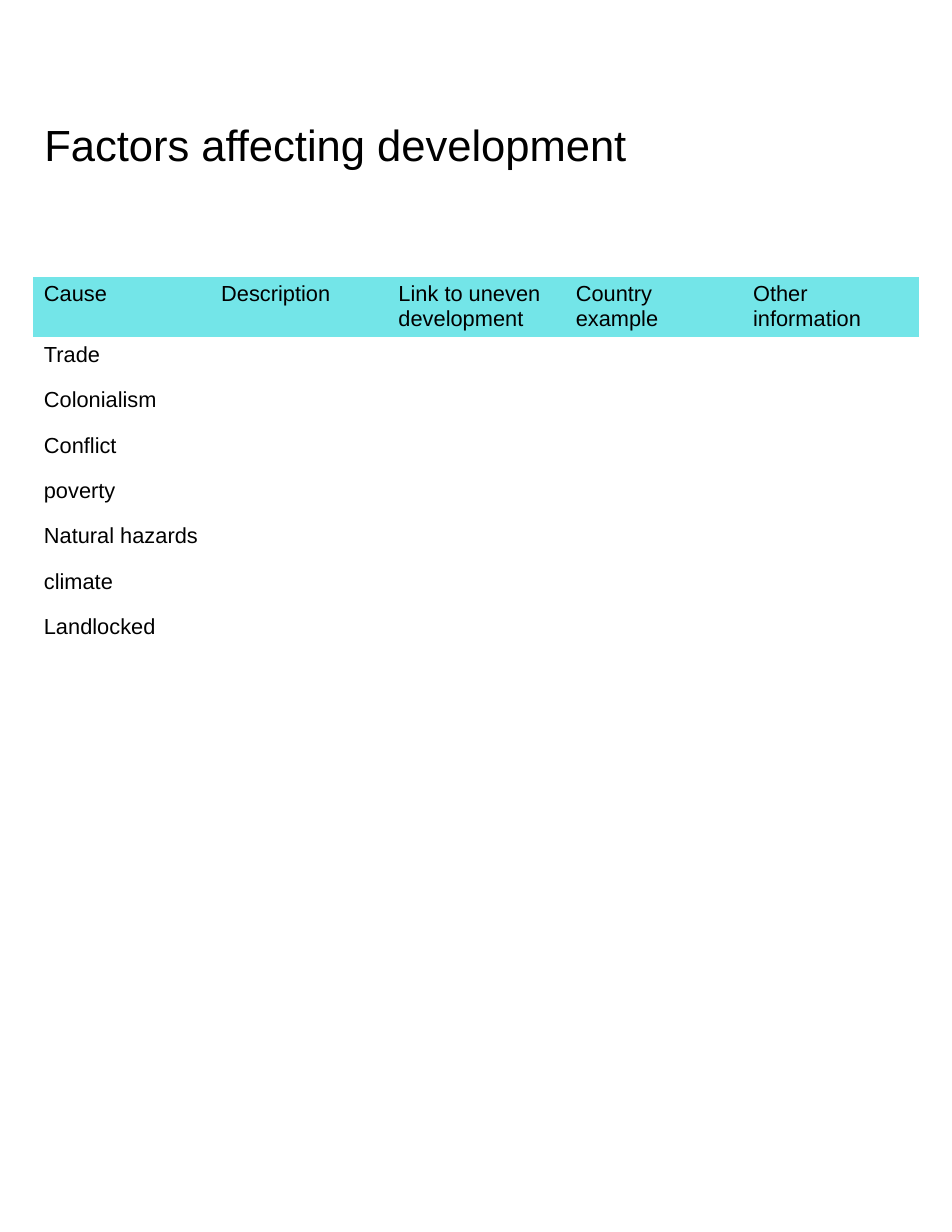
from pptx import Presentation
from pptx.dml.color import RGBColor
from pptx.enum.text import MSO_ANCHOR, PP_ALIGN
from pptx.util import Pt

PX = 9525  # EMU per px, 96 px to the inch
FONT = "Arial"
COLORS = {"text": "000000", "header": "73E5E8"}
TOP, LEFT = MSO_ANCHOR.TOP, PP_ALIGN.LEFT
TITLE_ONLY = 5

HEADERS = ["Cause", "Description", "Link to uneven development",
           "Country example", "Other information"]
CAUSES = ["Trade", "Colonialism", "Conflict", "poverty",
          "Natural hazards", "climate", "Landlocked"]
ROW_HEIGHT = 39


def px(n):
    return int(n * PX)


def style(p, size):
    p.alignment = LEFT
    p.font.name = FONT
    p.font.size = Pt(size)
    p.font.bold = False
    p.font.color.rgb = RGBColor.from_string(COLORS["text"])


def add_title(s, text, x, y, w, h):
    sp = s.shapes.title
    sp.left, sp.top, sp.width, sp.height = map(px, (x, y, w, h))
    tf = sp.text_frame
    tf.text = text
    tf.word_wrap = True
    tf.vertical_anchor = TOP
    tf.margin_left = tf.margin_right = tf.margin_top = tf.margin_bottom = px(10)
    style(tf.paragraphs[0], 28)


def add_factor_table(s, x, y, w):
    """Header row of questions, then one row per cause left open to fill in."""
    blanks = [""] * (len(HEADERS) - 1)
    rows = [HEADERS] + [[cause] + blanks for cause in CAUSES]
    frame = s.shapes.add_table(len(rows), len(HEADERS), px(x), px(y),
                               px(w), px(ROW_HEIGHT * len(rows)))
    table = frame.table
    table.first_row = table.horz_banding = False
    for i, row in enumerate(rows):
        table.rows[i].height = px(ROW_HEIGHT)
        for j, text in enumerate(row):
            cell = table.cell(i, j)
            cell.text = text
            style(cell.text_frame.paragraphs[0], 14)
            if i == 0:
                cell.fill.solid()
                cell.fill.fore_color.rgb = RGBColor.from_string(COLORS["header"])
            else:
                cell.fill.background()
    # The plain "No Style, No Grid" table style draws no borders.
    style_id = frame._element.graphic.graphicData.tbl.tblPr[0]
    style_id.text = "{2D5ABB26-0587-4C30-8999-92F81FD0307C}"


def main():
    prs = Presentation()
    prs.slide_width, prs.slide_height = px(816), px(1056)
    s = prs.slides.add_slide(prs.slide_layouts[TITLE_ONLY])
    add_title(s, "Factors affecting development", 28, 91, 760, 117)
    add_factor_table(s, 28, 237, 760)
    prs.save("out.pptx")


if __name__ == "__main__":
    main()
